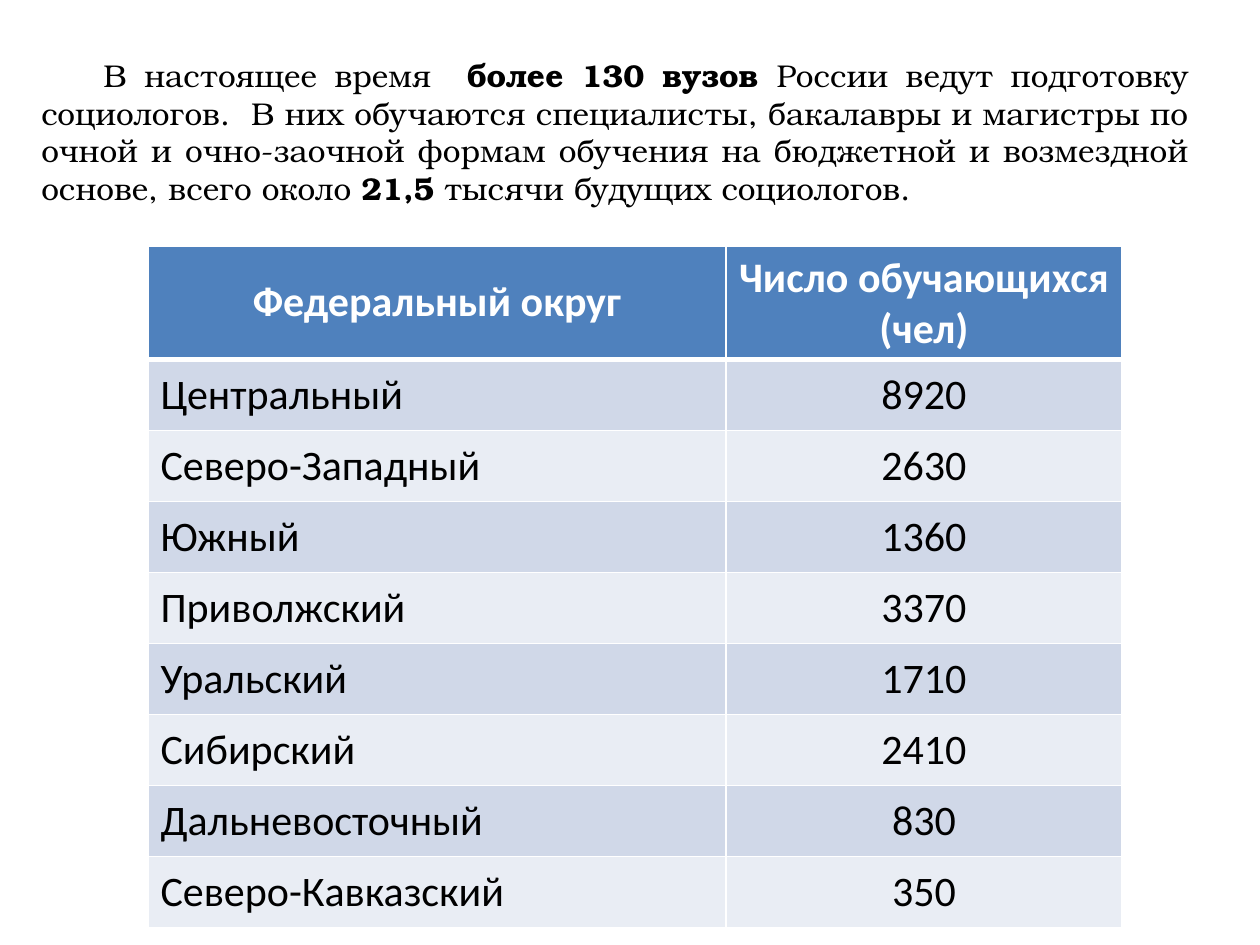
from lxml import etree
from pptx import Presentation
from pptx.dml.color import RGBColor
from pptx.enum.text import MSO_ANCHOR, PP_ALIGN
from pptx.oxml.ns import qn
from pptx.util import Emu, Pt

PX = 914400 // 126
LEFT, MID, JUST = PP_ALIGN.LEFT, PP_ALIGN.CENTER, PP_ALIGN.JUSTIFY
CENTER = MSO_ANCHOR.MIDDLE
WHITE, BLACK, BLUE = "FFFFFF", "000000", "4F81BD"
BANDS = ["D0D8E8", "E9EDF4"]


def put(par, text, size=24, font="Calibri", color=BLACK, bold=False, align=LEFT):
    par.alignment = align
    run = par.add_run()
    run.text = text
    run.font.size = Pt(size)
    run.font.name = font
    run.font.bold = bold
    run.font.color.rgb = RGBColor.from_string(color)


def edge(cell, side, width):
    line = etree.SubElement(cell._tc.get_or_add_tcPr(), qn("a:ln" + side), w=str(Pt(width)))
    fill = etree.SubElement(line, qn("a:solidFill"))
    etree.SubElement(fill, qn("a:srgbClr"), val=WHITE)


deck = Presentation()
deck.slide_width, deck.slide_height = Emu(1260 * PX), Emu(945 * PX)
slide = deck.slides.add_slide(deck.slide_layouts[6])

# Introduction
intro = [
    ("В настоящее время  ", False),
    ("более 130 вузов ", True),
    ("России ведут подготовку социологов.  В них обучаются специалисты, "
     "бакалавры и магистры по очной и очно-заочной формам обучения на "
     "бюджетной и возмездной основе, всего около ", False),
    ("21,5", True),
    (" тысячи будущих социологов. ", False),
]
box = slide.shapes.add_textbox(*[Emu(n * PX) for n in (29, 49, 1172, 165)])
frame = box.text_frame
frame.word_wrap = True
frame.vertical_anchor = CENTER
par = frame.paragraphs[0]
par._p.get_or_add_pPr().set("indent", str(62 * PX))
for text, bold in intro:
    put(par, text, size=18, font="TeX Gyre Bonum", bold=bold, align=JUST)

# Students by federal district
rows = [
    ("Федеральный округ", "Число обучающихся (чел)"),
    ("Центральный", "8920"),
    ("Северо-Западный", "2630"),
    ("Южный", "1360"),
    ("Приволжский", "3370"),
    ("Уральский", "1710"),
    ("Сибирский", "2410"),
    ("Дальневосточный", "830"),
    ("Северо-Кавказский", "350"),
]
widths = [578, 396]
high = 71
spot = [Emu(n * PX) for n in (148, 246, sum(widths), high * len(rows))]
table = slide.shapes.add_table(len(rows), len(widths), *spot).table
for col, width in zip(table.columns, widths):
    col.width = Emu(width * PX)

for r, row in enumerate(rows):
    table.rows[r].height = Emu(high * PX)
    head = r == 0
    for c, text in enumerate(row):
        cell = table.cell(r, c)
        cell.vertical_anchor = CENTER
        # The rule under the header is thicker
        for side in "LRTB":
            thick = (r, side) in [(0, "B"), (1, "T")]
            edge(cell, side, 3 if thick else 1)
        cell.fill.solid()
        cell.fill.fore_color.rgb = RGBColor.from_string(BLUE if head else BANDS[(r - 1) % 2])
        put(cell.text_frame.paragraphs[0], text, bold=head,
            color=WHITE if head else BLACK, align=MID if head or c else LEFT)

deck.save("out.pptx")
